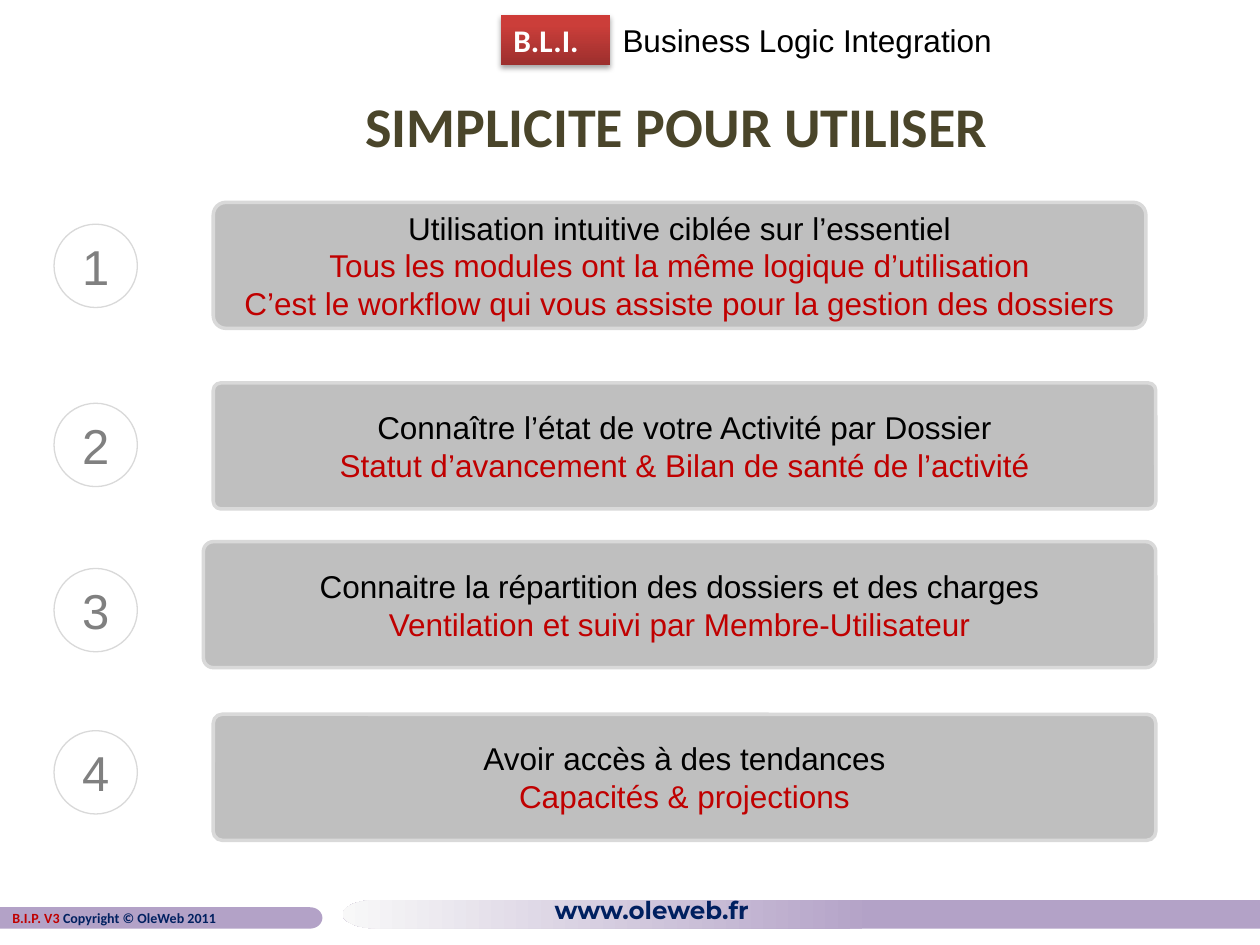
from dataclasses import dataclass
from math import cos, pi, sin

from lxml.etree import SubElement
from pptx import Presentation
from pptx.dml.color import RGBColor
from pptx.enum.shapes import MSO_SHAPE
from pptx.enum.text import MSO_ANCHOR, PP_ALIGN
from pptx.oxml import parse_xml
from pptx.oxml.ns import nsdecls, qn
from pptx.util import Cm, Pt


@dataclass(frozen=True)
class Theme:
    black: str = "000000"
    white: str = "FFFFFF"
    red: str = "C00000"
    navy: str = "002060"
    olive: str = "4A452A"
    number_grey: str = "808080"
    card_grey: str = "BFBFBF"
    border_grey: str = "D9D9D9"
    lavender: str = "B3A2C7"
    badge_stops: tuple = ((0, "9C2F2D"), (80, "CB3E3A"), (100, "CE3B37"))
    band_stops: tuple = ((42, "B3A2C7"), (100, "F8F8F8"))
    body_font: str = "Arial"
    heading_font: str = "Calibri"
    address_font: str = "Montserrat"
    title_size: int = 32
    number_size: int = 28
    body_size: int = 18
    address_size: int = 14
    copyright_size: int = 8


THEME = Theme()

# Card box in cm, corner rounding, drop of the number circle, lines of text
STEPS = [
    ((4.3, 4.08, 18.8, 2.54), 0.1, 0.44, [
        "Utilisation intuitive ciblée sur l’essentiel",
        "Tous les modules ont la même logique d’utilisation",
        "C’est le workflow qui vous assiste pour la gestion des dossiers"]),
    ((4.3, 7.72, 19, 2.54), 0.06, 0.41, [
        "Connaître l’état de votre Activité par Dossier",
        "Statut d’avancement & Bilan de santé de l’activité"]),
    ((4.1, 10.92, 19.2, 2.54), 0.08, 0.54, [
        "Connaitre la répartition des dossiers et des charges",
        "Ventilation et suivi par Membre-Utilisateur"]),
    ((4.3, 14.4, 19, 2.54), 0.07, 0.33, [
        "Avoir accès à des tendances",
        "Capacités & projections"]),
]


def to_cm(box):
    return [Cm(length) for length in box]


def write_text(shape, lines, size, font=THEME.body_font, bold=False,
               align=PP_ALIGN.LEFT, anchor=MSO_ANCHOR.TOP, wrap=True):
    """Fill a shape with lines, each a list of (text, colour) runs."""
    frame = shape.text_frame
    frame.word_wrap = wrap
    frame.vertical_anchor = anchor
    for index, runs in enumerate(lines):
        paragraph = frame.add_paragraph() if index else frame.paragraphs[0]
        paragraph.alignment = align
        for text, color in runs:
            run = paragraph.add_run()
            run.text = text
            run.font.size = Pt(size)
            run.font.name = font
            run.font.bold = bold
            run.font.color.rgb = RGBColor.from_string(color)


def add_label(slide, box, runs, size, **text_format):
    write_text(slide.shapes.add_textbox(*to_cm(box)), [runs], size, **text_format)


def paint(shape, fill, line=None, line_width=1):
    shape.shadow.inherit = False
    shape.fill.solid()
    shape.fill.fore_color.rgb = RGBColor.from_string(fill)
    if line:
        shape.line.color.rgb = RGBColor.from_string(line)
        shape.line.width = Pt(line_width)
    else:
        shape.line.fill.background()


def paint_gradient(shape, stops, angle):
    """Replace the solid fill by a linear gradient, angle clockwise in degrees."""
    paint(shape, THEME.white)
    colors = "".join(
        f'<a:gs pos="{position * 1000}"><a:srgbClr val="{color}"/></a:gs>'
        for position, color in stops)
    gradient = parse_xml(
        f'<a:gradFill {nsdecls("a")} rotWithShape="1"><a:gsLst>{colors}</a:gsLst>'
        f'<a:lin ang="{angle * 60000}" scaled="0"/></a:gradFill>')
    properties = shape.element.spPr
    properties.replace(properties.find(qn("a:solidFill")), gradient)


def add_soft_shadow(shape):
    effects = shape.element.spPr.find(qn("a:effectLst"))
    shadow = SubElement(effects, qn("a:outerShdw"), blurRad=str(Pt(3.1)),
                        dist=str(Pt(1.8)), dir="5400000", rotWithShape="0")
    color = SubElement(shadow, qn("a:srgbClr"), val=THEME.black)
    SubElement(color, qn("a:alpha"), val="35000")


def add_band(slide, box, cap, rounded_left):
    """Draw a band with one square end and one elliptical end, cap deep."""
    left, top, width, height = box
    direction = -1 if rounded_left else 1
    square_x = left + width if rounded_left else left
    cap_x = left + cap if rounded_left else left + width - cap
    steps = 24
    angles = [-pi / 2 + pi * step / steps for step in range(steps + 1)]
    curve = [(Cm(cap_x + direction * cap * cos(angle)),
              Cm(top + height / 2 * (1 + sin(angle)))) for angle in angles]
    builder = slide.shapes.build_freeform(Cm(square_x), Cm(top))
    builder.add_line_segments(curve + [(Cm(square_x), Cm(top + height))], close=True)
    return builder.convert_to_shape()


def add_header(slide, box):
    left, top, width, height = box
    badge_width = 2.2
    badge = slide.shapes.add_shape(
        MSO_SHAPE.RECTANGLE, *to_cm((left, top, badge_width, height)))
    paint_gradient(badge, THEME.badge_stops, 270)
    add_soft_shadow(badge)
    write_text(badge, [[("B.L.I.", THEME.white)]], THEME.body_size,
               font=THEME.heading_font, bold=True)
    add_label(slide, (left + badge_width, top, width - badge_width, height),
              [("Business Logic Integration", THEME.black)], THEME.body_size, wrap=False)


def add_title(slide, box):
    add_label(slide, box, [("SIMPLICITE POUR UTILISER", THEME.olive)],
              THEME.title_size, font=THEME.heading_font, bold=True, wrap=False)


def add_step(slide, box, number, rounding, circle_drop, lines):
    circle_left, circle_size = 1.09, 1.68
    centred = {"align": PP_ALIGN.CENTER, "anchor": MSO_ANCHOR.MIDDLE}
    card = slide.shapes.add_shape(MSO_SHAPE.ROUNDED_RECTANGLE, *to_cm(box))
    card.adjustments[0] = rounding
    paint(card, THEME.card_grey, THEME.border_grey, 2)
    colored_lines = [[(line, THEME.red if index else THEME.black)]
                     for index, line in enumerate(lines)]
    write_text(card, colored_lines, THEME.body_size, **centred)

    circle = slide.shapes.add_shape(MSO_SHAPE.OVAL, *to_cm(
        (circle_left, box[1] + circle_drop, circle_size, circle_size)))
    paint(circle, THEME.white, THEME.border_grey, 0.75)
    write_text(circle, [[(str(number), THEME.number_grey)]], THEME.number_size, **centred)


def add_footer(slide, box):
    left, top, width, height = box
    band_left, copyright_width = 6.91, 6.5
    band = add_band(slide, (left + band_left, top, width - band_left, height), 0.71, True)
    paint_gradient(band, THEME.band_stops, 180)
    add_label(slide, (left + 10.42, top - 0.37, 5.44, 1.12),
              [("www.oleweb.fr", THEME.navy)], THEME.address_size,
              font=THEME.address_font, bold=True,
              align=PP_ALIGN.CENTER, anchor=MSO_ANCHOR.MIDDLE)
    tab = add_band(slide, (left, top + 0.15, copyright_width, height - 0.15), 0.25, False)
    paint(tab, THEME.lavender)
    add_label(slide, (left, top + 0.08, copyright_width, 0.6),
              [("B.I.P. V3 ", THEME.red), ("Copyright © OleWeb 2011", THEME.navy)],
              THEME.copyright_size, font=THEME.heading_font, bold=True)


def main():
    presentation = Presentation()
    presentation.slide_width, presentation.slide_height = Cm(25.4), Cm(19.05)
    slide = presentation.slides.add_slide(presentation.slide_layouts[6])
    add_header(slide, (10.1, 0.3, 11.34, 1.02))
    add_footer(slide, (0, 18.14, 25.4, 0.58))
    add_title(slide, (7.11, 1.73, 13.18, 1.63))
    for number, (box, rounding, circle_drop, lines) in enumerate(STEPS, start=1):
        add_step(slide, box, number, rounding, circle_drop, lines)
    presentation.save("out.pptx")


if __name__ == "__main__":
    main()
